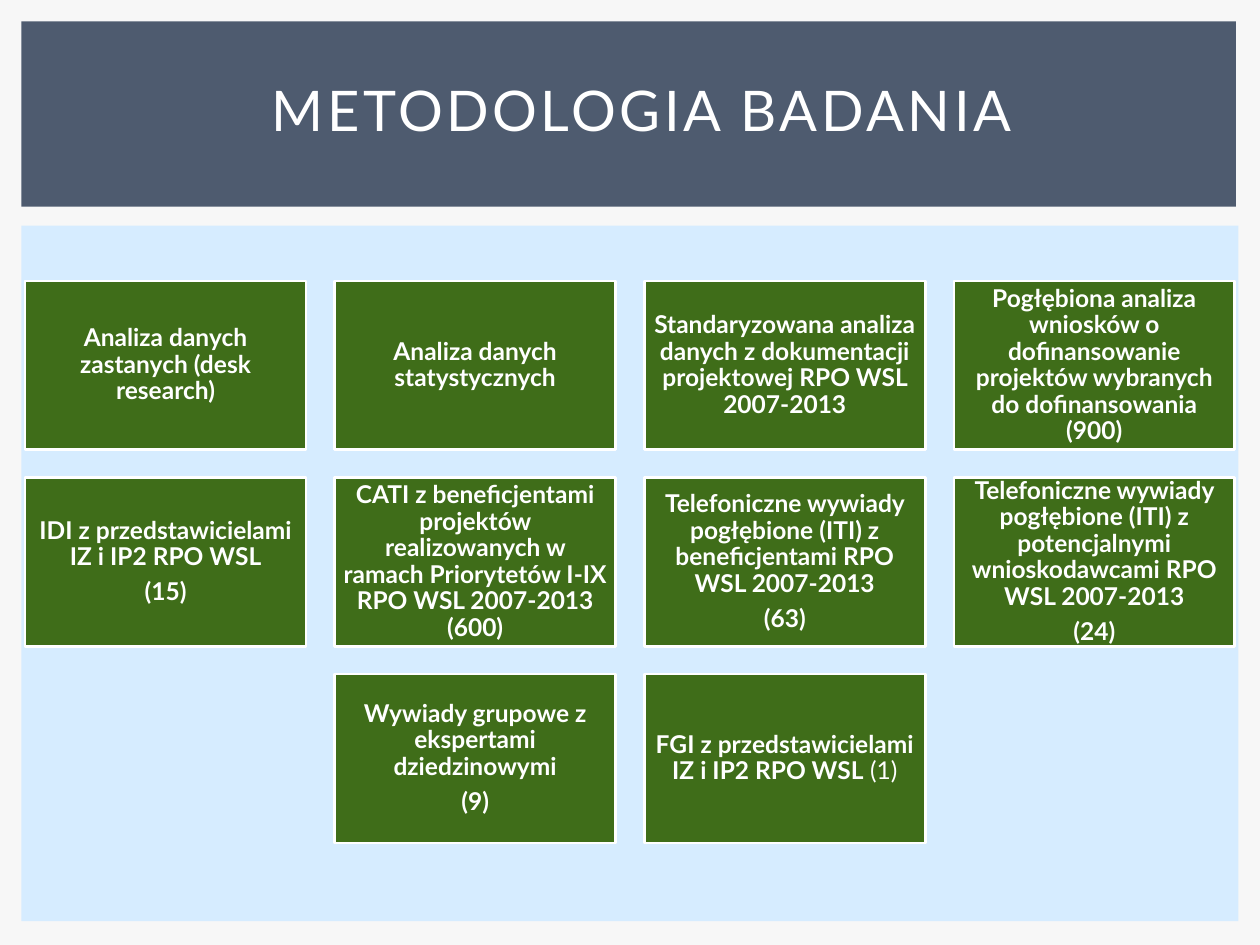
from dataclasses import dataclass

from pptx import Presentation
from pptx.dml.color import RGBColor
from pptx.enum.shapes import MSO_SHAPE
from pptx.enum.text import MSO_ANCHOR, PP_ALIGN
from pptx.util import Inches, Pt

WHITE, NAVY, SKY, GREEN, PAPER = "FFFFFF", "4E5B6F", "D6ECFF", "3F6D19", "F7F7F7"
FONT = "Lato"
COLS = 4
LEFT, TOP = 0.2, 2.23
WIDE, HIGH = 2.23, 1.34
STEP_X, STEP_Y = 2.457, 1.56


@dataclass
class Method:
    name: str
    count: str = ""
    light: str = ""


ROWS = [
    [
        Method("Analiza danych zastanych (desk research)"),
        Method("Analiza danych statystycznych"),
        Method("Standaryzowana analiza danych z dokumentacji projektowej RPO WSL 2007-2013"),
        Method("Pogłębiona analiza wniosków o dofinansowanie projektów wybranych do dofinansowania (900)"),
    ],
    [
        Method("IDI z przedstawicielami IZ i IP2 RPO WSL", "(15)"),
        Method("CATI z beneficjentami projektów realizowanych w ramach Priorytetów I-IX RPO WSL 2007-2013 (600)"),
        Method("Telefoniczne wywiady pogłębione (ITI) z beneficjentami RPO WSL 2007-2013", "(63)"),
        Method("Telefoniczne wywiady pogłębione (ITI) z potencjalnymi wnioskodawcami RPO WSL 2007-2013", "(24)"),
    ],
    [
        Method("Wywiady grupowe z ekspertami dziedzinowymi", "(9)"),
        Method("FGI z przedstawicielami IZ i IP2 RPO WSL", light=" (1)"),
    ],
]


def color(code: str) -> RGBColor:
    return RGBColor.from_string(code)


def set_all(item, values: dict) -> None:
    """Set each named attribute of item."""
    for name, value in values.items():
        setattr(item, name, value)


def add_rect(slide, x: float, y: float, w: float, h: float, fill: str, line: str = ""):
    rect = slide.shapes.add_shape(
        MSO_SHAPE.RECTANGLE, Inches(x), Inches(y), Inches(w), Inches(h))
    rect.shadow.inherit = False
    rect.fill.solid()
    rect.fill.fore_color.rgb = color(fill)
    if line:
        rect.line.color.rgb = color(line)
        rect.line.width = Pt(1.5)
    else:
        rect.line.fill.background()
    return rect


def add_run(para, text: str, size: float, bold: bool):
    run = para.add_run()
    run.text = text
    set_all(run.font, {"name": FONT, "size": Pt(size), "bold": bold})
    run.font.color.rgb = color(WHITE)
    return run


def add_title(slide, text: str) -> None:
    box = slide.shapes.add_textbox(Inches(0.51), Inches(0.29), Inches(9.17), Inches(1.15))
    frame = box.text_frame
    set_all(frame, {"word_wrap": True, "vertical_anchor": MSO_ANCHOR.MIDDLE})
    para = frame.paragraphs[0]
    para.alignment = PP_ALIGN.CENTER
    run = add_run(para, text, 32, False)
    run.font._element.set("spc", "200")


def add_card(slide, x: float, y: float, method: Method) -> None:
    frame = add_rect(slide, x, y, WIDE, HIGH, GREEN, WHITE).text_frame
    set_all(frame, {"word_wrap": True, "vertical_anchor": MSO_ANCHOR.MIDDLE})
    for side in ("left", "top", "right", "bottom"):
        setattr(frame, f"margin_{side}", Inches(0.06))
    paras = [frame.paragraphs[0]]
    add_run(paras[0], method.name, 14, True)
    if method.light:
        add_run(paras[0], method.light, 14, False)
    if method.count:
        paras.append(frame.add_paragraph())
        add_run(paras[1], method.count, 14, True)
    for para in paras:
        set_all(para, {"alignment": PP_ALIGN.CENTER, "line_spacing": 0.9,
                       "space_after": Pt(5)})


def main() -> None:
    deck = Presentation()
    set_all(deck, {"slide_width": Inches(10), "slide_height": Inches(7.5)})
    slide = deck.slides.add_slide(deck.slide_layouts[6])
    slide.background.fill.solid()
    slide.background.fill.fore_color.rgb = color(PAPER)

    add_rect(slide, 0.17, 1.79, 9.66, 5.52, SKY)
    add_rect(slide, 0.17, 0.17, 9.64, 1.47, NAVY)
    add_title(slide, "METODOLOGIA BADANIA")

    for i, row in enumerate(ROWS):
        start = (COLS - len(row)) / 2
        for j, method in enumerate(row):
            add_card(slide, LEFT + (start + j) * STEP_X, TOP + i * STEP_Y, method)

    deck.save("out.pptx")


if __name__ == "__main__":
    main()
